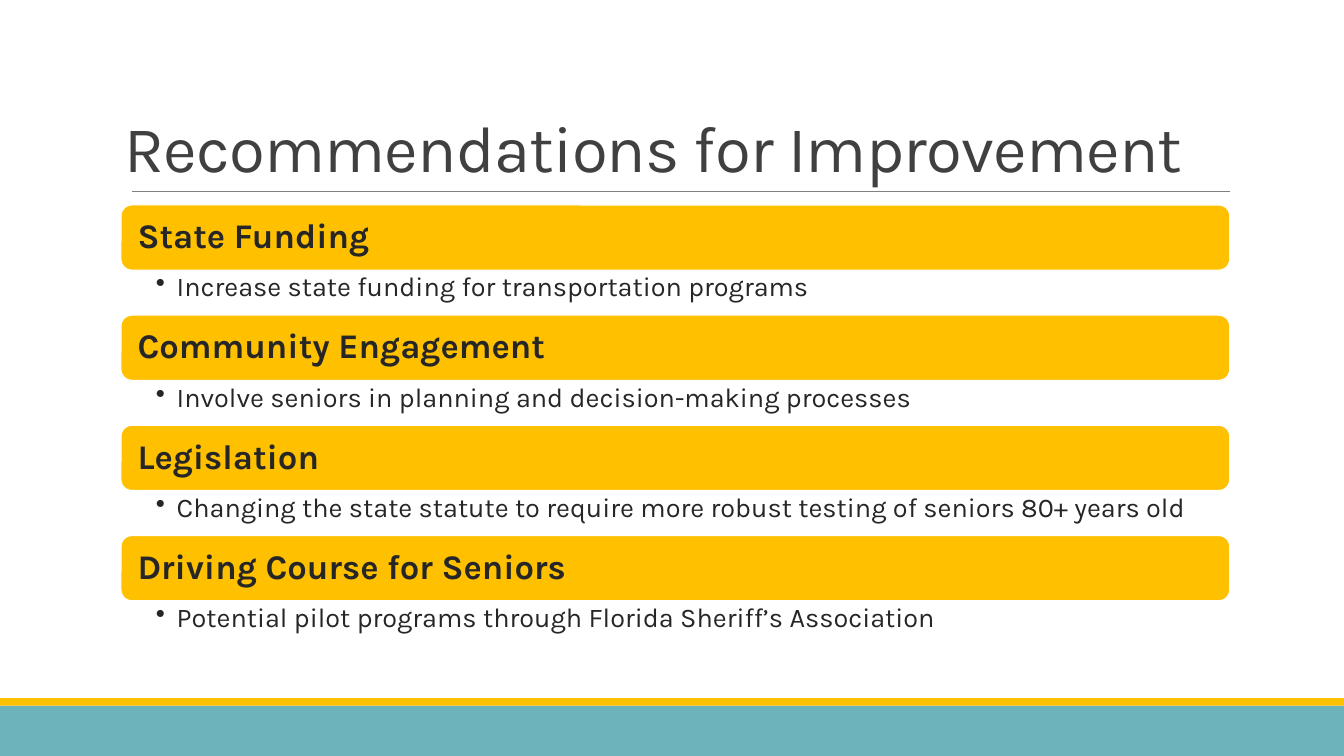
from dataclasses import dataclass

from lxml import etree
from pptx import Presentation
from pptx.dml.color import RGBColor
from pptx.enum import shapes, text
from pptx.oxml import ns
from pptx.util import Inches, Pt

FONT = "Karla"
HEX = {
    "teal": "6DB3BC",
    "gold": "FFC000",
    "rule": "808080",
    "title": "404040",
    "body": "262626",
    "white": "FFFFFF",
}
LEFT, WIDE = 1.8, 16.5
TOP, STEP = 3.05, 1.64
BAR, NOTE = 0.97, 0.67


@dataclass
class Item:
    head: str
    note: str


ITEMS = [
    Item("State Funding", "Increase state funding for transportation programs"),
    Item("Community Engagement",
         "Involve seniors in planning and decision-making processes"),
    Item("Legislation",
         "Changing the state statute to require more robust testing of seniors 80+ years old"),
    Item("Driving Course for Seniors",
         "Potential pilot programs through Florida Sheriff’s Association"),
]


def tint(name: str) -> RGBColor:
    return RGBColor.from_string(HEX[name])


def add_run(para, words: str, size: float, color: str, bold: bool = False):
    run = para.add_run()
    run.text = words
    font = run.font
    font.name, font.size, font.bold = FONT, Pt(size), bold
    font.color.rgb = tint(color)
    return run


def set_frame(frame, anchor, left: float, top: float, right: float, low: float) -> None:
    frame.word_wrap = True
    frame.auto_size = text.MSO_AUTO_SIZE.NONE
    frame.vertical_anchor = anchor
    frame.margin_left, frame.margin_top = Inches(left), Inches(top)
    frame.margin_right, frame.margin_bottom = Inches(right), Inches(low)


def add_box(slide, kind, x: float, y: float, w: float, h: float, color: str):
    box = slide.shapes.add_shape(kind, Inches(x), Inches(y), Inches(w), Inches(h))
    box.shadow.inherit = False
    box.fill.solid()
    box.fill.fore_color.rgb = tint(color)
    box.line.fill.background()
    return box


def add_rule(slide, x: float, y: float, end: float) -> None:
    rule = slide.shapes.add_connector(
        shapes.MSO_CONNECTOR.STRAIGHT, Inches(x), Inches(y), Inches(end), Inches(y))
    rule.line.color.rgb = tint("rule")
    rule.line.width = Pt(0.5)
    etree.SubElement(rule._element.spPr, ns.qn("a:effectLst"))


def add_title(slide, words: str) -> None:
    title = slide.shapes.title
    title.left, title.top = Inches(1.75), Inches(0.43)
    title.width, title.height = Inches(16.5), Inches(2.38)
    set_frame(title.text_frame, text.MSO_ANCHOR.BOTTOM, 0.1, 0.05, 0.1, 0.05)
    para = title.text_frame.paragraphs[0]
    para.alignment = text.PP_ALIGN.LEFT
    para.line_spacing = 0.85
    run = add_run(para, words, 70, "title")
    run.font._element.set("spc", "-80")


def add_item(slide, item: Item, y: float) -> None:
    # Gold heading bar
    bar = add_box(slide, shapes.MSO_SHAPE.ROUNDED_RECTANGLE, LEFT, y, WIDE, BAR, "gold")
    bar.line.color.rgb = tint("white")
    bar.line.width = Pt(1.25)
    set_frame(bar.text_frame, text.MSO_ANCHOR.MIDDLE, 0.2, 0.15, 0.2, 0.15)
    para = bar.text_frame.paragraphs[0]
    para.alignment = text.PP_ALIGN.LEFT
    para.line_spacing = 0.9
    add_run(para, item.head, 37, "body", bold=True)

    # Bullet below the bar
    note = slide.shapes.add_textbox(
        Inches(LEFT), Inches(y + BAR), Inches(WIDE), Inches(NOTE))
    set_frame(note.text_frame, text.MSO_ANCHOR.TOP, 0.52, 0.05, 0.29, 0.05)
    para = note.text_frame.paragraphs[0]
    props = para._p.get_or_add_pPr()
    props.set("marL", str(Inches(0.31)))
    props.set("indent", str(-Inches(0.31)))
    etree.SubElement(props, ns.qn("a:buChar"), char="•")
    para.line_spacing = 0.9
    add_run(para, item.note, 29, "body")


def main() -> None:
    deck = Presentation()
    deck.slide_width, deck.slide_height = Inches(20), Inches(11.25)
    slide = deck.slides.add_slide(deck.slide_layouts.get_by_name("Title Only"))

    # Footer bands
    add_box(slide, shapes.MSO_SHAPE.RECTANGLE, 0, 10.5, 20, 0.75, "teal")
    add_box(slide, shapes.MSO_SHAPE.RECTANGLE, 0, 10.39, 20, 0.11, "gold")

    # Title and rule
    add_title(slide, "Recommendations for Improvement")
    add_rule(slide, 1.96, 2.85, 18.31)

    # Recommendations
    for row, item in enumerate(ITEMS):
        add_item(slide, item, TOP + row * STEP)

    deck.save("out.pptx")


if __name__ == "__main__":
    main()
